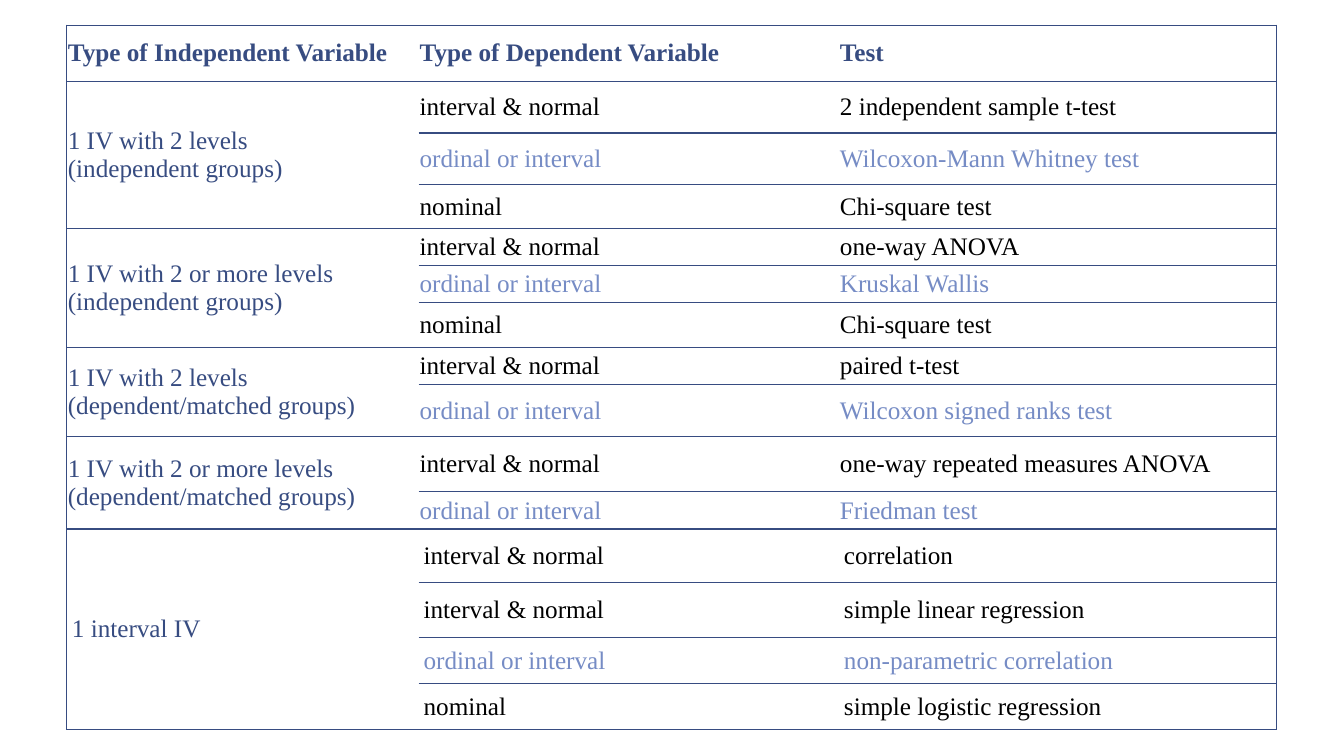
from dataclasses import dataclass

from lxml import etree
from pptx import Presentation
from pptx.dml.color import RGBColor
from pptx.enum import text
from pptx.oxml import ns
from pptx.util import Pt


@dataclass(frozen=True)
class Theme:
    """Colours, font and sizes of the slide."""
    ink: str = "000000"
    navy: str = "374C81"
    muted: str = "768CC5"
    paper: str = "FFFFFF"
    font: str = "Times New Roman"
    size: float = 18
    rule: float = 1
    tight: float = 0.72
    loose: float = 3.6


THEME = Theme()
HEADINGS = ("Type of Independent Variable", "Type of Dependent Variable", "Test")
HEADING_HEIGHT = 40
COLUMN_WIDTHS = (251.25, 300.25, 312.5)
NORMAL, ORDINAL, NOMINAL = "interval & normal", "ordinal or interval", "nominal"
GROUPS = (
    ("1 IV with 2 levels\n(independent groups)", THEME.tight, (
        (NORMAL, "2 independent sample t-test", 37),
        (ORDINAL, "Wilcoxon-Mann Whitney test", 37),
        (NOMINAL, "Chi-square test", 31))),
    ("1 IV with 2 or more levels\n(independent groups)", THEME.tight, (
        (NORMAL, "one-way ANOVA", 26.5),
        (ORDINAL, "Kruskal Wallis", 26.5),
        (NOMINAL, "Chi-square test", 32.5))),
    ("1 IV with 2 levels\n(dependent/matched groups)", THEME.tight, (
        (NORMAL, "paired t-test", 26.5),
        (ORDINAL, "Wilcoxon signed ranks test", 37))),
    ("1 IV with 2 or more levels (dependent/matched groups)", THEME.tight, (
        (NORMAL, "one-way repeated measures ANOVA", 39.5),
        (ORDINAL, "Friedman test", 26.5))),
    ("1 interval IV", THEME.loose, (
        (NORMAL, "correlation", 38.5),
        (NORMAL, "simple linear regression", 39),
        (ORDINAL, "non-parametric correlation", 33),
        (NOMINAL, "simple logistic regression", 33))),
)


def set_borders(cell, sides):
    """Rule the named sides of a cell and clear the others."""
    tc_pr = cell._tc.get_or_add_tcPr()
    for i, side in enumerate("LRTB"):
        ln = etree.Element(ns.qn(f"a:ln{side}"), w=str(Pt(THEME.rule)))
        if side in sides:
            fill = etree.SubElement(ln, ns.qn("a:solidFill"))
            etree.SubElement(fill, ns.qn("a:srgbClr"), val=THEME.navy)
        else:
            etree.SubElement(ln, ns.qn("a:noFill"))
        tc_pr.insert(i, ln)


def style_cell(cell, sides, inset=THEME.tight):
    """Give a cell its fill, margins, anchor and borders."""
    cell.fill.solid()
    cell.fill.fore_color.rgb = RGBColor.from_string(THEME.paper)
    cell.margin_left = cell.margin_right = Pt(inset)
    cell.margin_top = cell.margin_bottom = Pt(inset)
    cell.vertical_anchor = text.MSO_ANCHOR.MIDDLE
    set_borders(cell, sides)


def write_cell(cell, words, color, bold=False):
    """Write the words of a cell, one paragraph a line."""
    cell.text = words
    for p in cell.text_frame.paragraphs:
        p.font.name = THEME.font
        p.font.size = Pt(THEME.size)
        p.font.bold = bold
        p.font.color.rgb = RGBColor.from_string(color)


def add_group(table, top, label, inset, tests):
    """Fill one group of tests from row top and return the next free row."""
    last = top + len(tests) - 1
    for row, (dependent, test, height) in enumerate(tests, top):
        table.rows[row].height = Pt(height)
        edges = "L" + "T" * (row == top) + "B" * (row in (top, last))
        for col, sides in enumerate((edges, "TB", "TBR")):
            style_cell(table.cell(row, col), sides, inset)
        color = THEME.muted if dependent == ORDINAL else THEME.ink
        write_cell(table.cell(row, 1), dependent, color)
        write_cell(table.cell(row, 2), test, color)
    table.cell(top, 0).merge(table.cell(last, 0))
    write_cell(table.cell(top, 0), label, THEME.navy)
    return last + 1


def add_test_table(s, left, top, width, height):
    """Place the table of statistical tests in the given box."""
    rows = 1 + sum(len(tests) for _, _, tests in GROUPS)
    table = s.shapes.add_table(rows, len(HEADINGS), Pt(left), Pt(top),
                               Pt(width), Pt(height)).table
    table.first_row = table.horz_banding = False
    for column, share in zip(table.columns, COLUMN_WIDTHS):
        column.width = Pt(width * share / sum(COLUMN_WIDTHS))
    table.rows[0].height = Pt(HEADING_HEIGHT)
    for col, (heading, sides) in enumerate(zip(HEADINGS, ("LTB", "TB", "TBR"))):
        style_cell(table.cell(0, col), sides)
        write_cell(table.cell(0, col), heading, THEME.navy, bold=True)
    row = 1
    for group in GROUPS:
        row = add_group(table, row, *group)


def main():
    """Build and save the slide."""
    prs = Presentation()
    prs.slide_width, prs.slide_height = Pt(960), Pt(540)
    s = prs.slides.add_slide(prs.slide_layouts.get_by_name("Blank"))
    add_test_table(s, 47.75, 18, 864, 503.5)
    prs.save("out.pptx")


if __name__ == "__main__":
    main()
